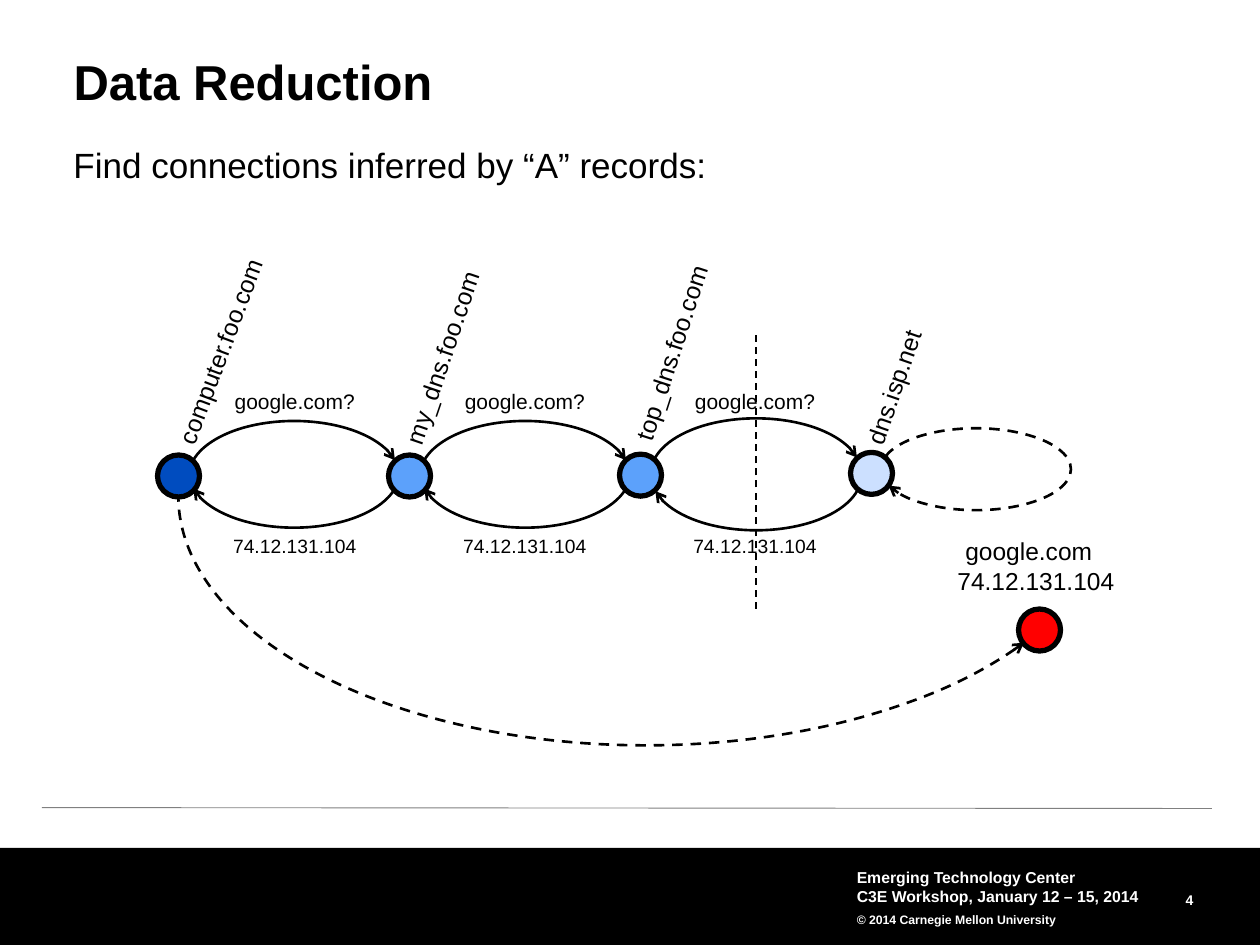
"""Build the Data Reduction slide about connections inferred by DNS records."""
from lxml.etree import SubElement
from pptx import Presentation
from pptx.dml.color import RGBColor
from pptx.enum.dml import MSO_LINE
from pptx.enum.shapes import MSO_CONNECTOR, MSO_SHAPE
from pptx.enum.text import MSO_ANCHOR, PP_ALIGN
from pptx.oxml.ns import qn
from pptx.util import Pt

BLACK = RGBColor(0x00, 0x00, 0x00)
WHITE = RGBColor(0xFF, 0xFF, 0xFF)
GRAY = RGBColor(0x80, 0x80, 0x80)
DARK_BLUE = RGBColor(0x00, 0x4C, 0xBF)
MID_BLUE = RGBColor(0x5C, 0xA1, 0xFB)
PALE_BLUE = RGBColor(0xCC, 0xE0, 0xFF)
RED = RGBColor(0xFF, 0x00, 0x00)

NODE_SIZE = 24
NODE_STEP = 132
LABEL_STEP = 131.5


def write_text(paragraph, text, size=14, color=BLACK, bold=False,
               align=PP_ALIGN.LEFT, spacing=None, indent=0):
    """Put formatted text into a paragraph."""
    if indent:
        paragraph._p.get_or_add_pPr().set("marL", str(Pt(indent)))
    paragraph.text = text
    paragraph.alignment = align
    paragraph.line_spacing = spacing
    font = paragraph.font
    font.name, font.size, font.bold = "Arial", Pt(size), bold
    font.color.rgb = color


class SlideBuilder:
    """Hold the drawing style and the current slide."""

    arrow = "arrow"

    def __init__(self, slide):
        """Start drawing on a slide."""
        self.slide = slide

    def frame(self, shape, box, inset=(0, 0), anchor=MSO_ANCHOR.TOP, wrap=True):
        """Place a text shape and return its prepared frame."""
        shape.left, shape.top, shape.width, shape.height = map(Pt, box)
        frame = shape.text_frame
        frame.margin_left = frame.margin_right = Pt(inset[0])
        frame.margin_top = frame.margin_bottom = Pt(inset[1])
        frame.vertical_anchor, frame.word_wrap = anchor, wrap
        return frame

    def title(self, text, box):
        """Fill the title placeholder."""
        frame = self.frame(self.slide.shapes.title, box)
        write_text(frame.paragraphs[0], text, size=28, bold=True, spacing=0.9)

    def text(self, lines, box, rotation=0, **layout):
        """Add a text box from (text, format) pairs."""
        shape = self.slide.shapes.add_textbox(0, 0, 0, 0)
        frame = self.frame(shape, box, **layout)
        shape.rotation = rotation
        for index, (text, style) in enumerate(lines):
            paragraph = frame.add_paragraph() if index else frame.paragraphs[0]
            write_text(paragraph, text, **style)

    def label(self, text, box, size=14, rotation=0):
        """Add a centred diagram label."""
        self.text([(text, {"size": size, "align": PP_ALIGN.CENTER})], box,
                  rotation, inset=(7.2, 3.6), wrap=False)

    def shape(self, kind, box, fill=None, line_width=0):
        """Add a preset shape with its fill and outline."""
        shape = self.slide.shapes.add_shape(kind, *map(Pt, box))
        shape.shadow.inherit = False
        if fill is None:
            shape.fill.background()
        else:
            shape.fill.solid()
            shape.fill.fore_color.rgb = fill
        if line_width:
            shape.line.color.rgb = BLACK
            shape.line.width = Pt(line_width)
        else:
            shape.line.fill.background()
        return shape

    def node(self, left, top, fill):
        """Add a host circle."""
        self.shape(MSO_SHAPE.OVAL, (left, top, NODE_SIZE, NODE_SIZE), fill, 3)

    def arc(self, box, rotation, angles, end="tailEnd", dashed=False):
        """Add an arc between two angles in degrees, with one arrowhead."""
        shape = self.shape(MSO_SHAPE.ARC, box, line_width=1.5)
        shape.rotation = rotation
        for index, degrees in enumerate(angles):
            shape.adjustments[index] = degrees * 0.6
        if dashed:
            shape.line.dash_style = MSO_LINE.DASH
        outline = shape._element.spPr.find(qn("a:ln"))
        SubElement(outline, qn(f"a:{end}")).set("type", self.arrow)

    def line(self, start, end, color, width, dashed=False):
        """Add a straight line."""
        connector = self.slide.shapes.add_connector(
            MSO_CONNECTOR.STRAIGHT, *map(Pt, start + end))
        connector.line.color.rgb = color
        connector.line.width = Pt(width)
        if dashed:
            connector.line.dash_style = MSO_LINE.DASH
        SubElement(connector._element.spPr, qn("a:effectLst"))


def draw_page(builder):
    """Draw the footer, title and introduction."""
    builder.line((24, 461.5), (692.5, 462), GRAY, 0.5)
    builder.shape(MSO_SHAPE.RECTANGLE, (0, 484.5, 720, 55.5), BLACK)
    white_bold = {"color": WHITE, "bold": True}
    builder.text([("4", {**white_bold, "size": 8, "align": PP_ALIGN.RIGHT,
                         "spacing": Pt(13)})],
                 (616, 506, 66, 13), anchor=MSO_ANCHOR.MIDDLE)
    builder.text([
        ("Emerging Technology Center", {**white_bold, "size": 9}),
        ("C3E Workshop, January 12 – 15, 2014", {**white_bold, "size": 9}),
        ("© 2014 Carnegie Mellon University",
         {**white_bold, "size": 7, "spacing": 1.5}),
    ], (486, 492, 180, 41.5), inset=(3.6, 3.6), anchor=MSO_ANCHOR.MIDDLE)
    builder.title("Data Reduction", (42, 33, 642, 30))
    builder.text([("Find connections inferred by “A” records:",
                   {"size": 20, "spacing": 0.95})], (42, 84, 371.5, 30))


def draw_diagram(builder):
    """Draw the hosts, their names and the queries between them."""
    hosts = [
        ("computer.foo.com", DARK_BLUE, 260, (62.6, 188.6, 126.7, 24.5), 290.6),
        ("my_dns.foo.com", MID_BLUE, 260, (193.7, 192.2, 118, 24.5), 288.8),
        ("top_dns.foo.com", MID_BLUE, 259.5, (324, 189.4, 119.5, 24.5), 288),
        ("dns.isp.net", PALE_BLUE, 258.5, (469.4, 208.8, 82.8, 24.5), 289.1),
    ]
    for index, (name, fill, top, box, rotation) in enumerate(hosts):
        builder.node(90 + index * NODE_STEP, top, fill)
        builder.label(name, box, rotation=rotation)
    builder.node(582, 348, RED)

    builder.arc((534.2, 213.8, 46.8, 108.7), 90, (98.15, 79.35), dashed=True)
    builder.arc((226.8, 16.6, 284.4, 534.2), 90, (291.15, 89.85),
                end="headEnd", dashed=True)
    builder.line((432, 348), (432, 188.6), BLACK, 1, dashed=True)

    for index, (query_top, answer_top) in enumerate(
            [(211.7, 210.2), (211.7, 210.2), (210.2, 211.7)]):
        for top, rotation in ((query_top, 270), (answer_top, 90)):
            builder.arc((136.8 + index * NODE_STEP, top, 62.6, 120.2),
                        rotation, (278.44, 81.2))
        left = 125.5 + index * LABEL_STEP
        builder.label("google.com?", (left, 218.2, 86, 21.6), size=12)
        builder.label("74.12.131.104", (left, 301.7, 86, 21), size=11)

    builder.text([("google.com", {"indent": 4.5}), ("74.12.131.104", {})],
                 (540, 303, 107, 41), inset=(7.2, 3.6))


def main():
    """Create and save the presentation."""
    presentation = Presentation()
    presentation.slide_width, presentation.slide_height = Pt(720), Pt(540)
    slide = presentation.slides.add_slide(presentation.slide_layouts[5])
    builder = SlideBuilder(slide)
    draw_page(builder)
    draw_diagram(builder)
    presentation.save("out.pptx")


if __name__ == "__main__":
    main()
